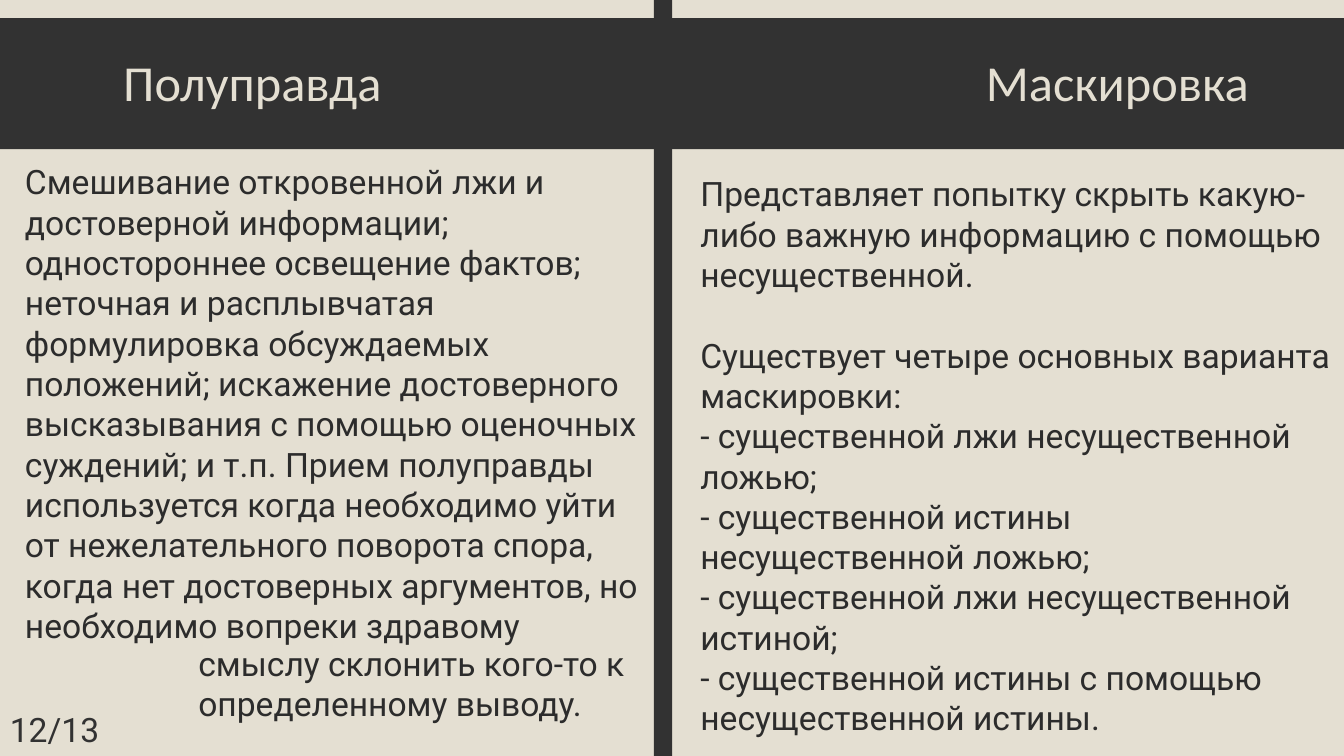
from dataclasses import dataclass

import pptx
import pptx.dml.color
import pptx.enum.shapes
import pptx.enum.text
import pptx.slide
import pptx.util

Cm = pptx.util.Cm
Pt = pptx.util.Pt
RGBColor = pptx.dml.color.RGBColor
PP_ALIGN = pptx.enum.text.PP_ALIGN

CREAM = RGBColor(0xE4, 0xDF, 0xD2)
CHARCOAL = RGBColor(0x32, 0x32, 0x32)
INK = RGBColor(0x2C, 0x2C, 0x2C)

WIDTH, HEIGHT = 33.87, 19.05
BLANK_LAYOUT = 6

TITLE = {"name": "Calibri", "size": Pt(36)}
BODY = {"name": "Roboto", "size": Pt(24)}


@dataclass(frozen=True)
class Box:
    left: float
    top: float
    width: float
    height: float

    def emu(self) -> tuple[int, ...]:
        return tuple(Cm(v) for v in (self.left, self.top, self.width, self.height))


@dataclass(frozen=True)
class Text:
    box: Box
    paragraphs: tuple[str, ...]
    font: dict
    color: RGBColor = INK
    align: PP_ALIGN = PP_ALIGN.LEFT
    wrap: bool = True
    gap_before: int | None = None


BARS = (
    Box(0, 0.46, WIDTH, 3.3),
    Box(16.48, 0, 0.46, HEIGHT),
)

TEXTS = (
    Text(Box(2.82, 1.17, 7.37, 1.8), ("Полуправда ",), TITLE, CREAM, PP_ALIGN.CENTER, False),
    Text(Box(24.56, 1.17, 7.49, 1.8), ("Маскировка ",), TITLE, CREAM, PP_ALIGN.CENTER, False),
    Text(
        Box(0.38, 3.94, 16.46, 12.57),
        (
            "Смешивание откровенной лжи и достоверной информации; "
            "одностороннее освещение фактов; неточная и расплывчатая "
            "формулировка обсуждаемых положений; искажение достоверного "
            "высказывания с помощью оценочных суждений; и т.п. Прием "
            "полуправды используется когда необходимо уйти от нежелательного "
            "поворота спора, когда нет достоверных аргументов, но необходимо "
            "вопреки здравому",
        ),
        BODY,
    ),
    Text(
        Box(4.75, 16.08, 11.73, 2.31),
        ("смыслу склонить кого-то к определенному выводу.",),
        BODY,
    ),
    Text(
        Box(17.4, 4.24, 16.46, 14.63),
        (
            "Представляет попытку скрыть какую-либо важную информацию "
            "с помощью несущественной.",
            "Существует четыре основных варианта маскировки:",
            "- существенной лжи несущественной ложью;",
            "- существенной истины несущественной ложью;",
            "- существенной лжи несущественной истиной;",
            "- существенной истины с помощью несущественной истины.",
        ),
        BODY,
        gap_before=1,
    ),
    Text(Box(0, 17.73, 2.79, 1.27), ("12/13",), BODY, CHARCOAL, wrap=False),
)


def add_bar(s: pptx.slide.Slide, box: Box) -> None:
    sp = s.shapes.add_shape(pptx.enum.shapes.MSO_SHAPE.RECTANGLE, *box.emu())
    sp.shadow.inherit = False
    sp.fill.solid()
    sp.fill.fore_color.rgb = CHARCOAL
    sp.line.fill.background()


def add_text(s: pptx.slide.Slide, text: Text) -> None:
    tf = s.shapes.add_textbox(*text.box.emu()).text_frame
    tf.word_wrap = text.wrap
    tf.auto_size = pptx.enum.text.MSO_AUTO_SIZE.SHAPE_TO_FIT_TEXT
    for i, content in enumerate(text.paragraphs):
        p = tf.paragraphs[0] if i == 0 else tf.add_paragraph()
        p.alignment = text.align
        if i == text.gap_before:
            p.space_before = Pt(28.8)
        r = p.add_run()
        r.text = content
        for key, value in text.font.items():
            setattr(r.font, key, value)
        r.font.color.rgb = text.color


def main() -> None:
    prs = pptx.Presentation()
    prs.slide_width, prs.slide_height = Cm(WIDTH), Cm(HEIGHT)
    s = prs.slides.add_slide(prs.slide_layouts[BLANK_LAYOUT])
    s.background.fill.solid()
    s.background.fill.fore_color.rgb = CREAM
    for bar in BARS:
        add_bar(s, bar)
    for text in TEXTS:
        add_text(s, text)
    prs.save("out.pptx")


if __name__ == "__main__":
    main()
